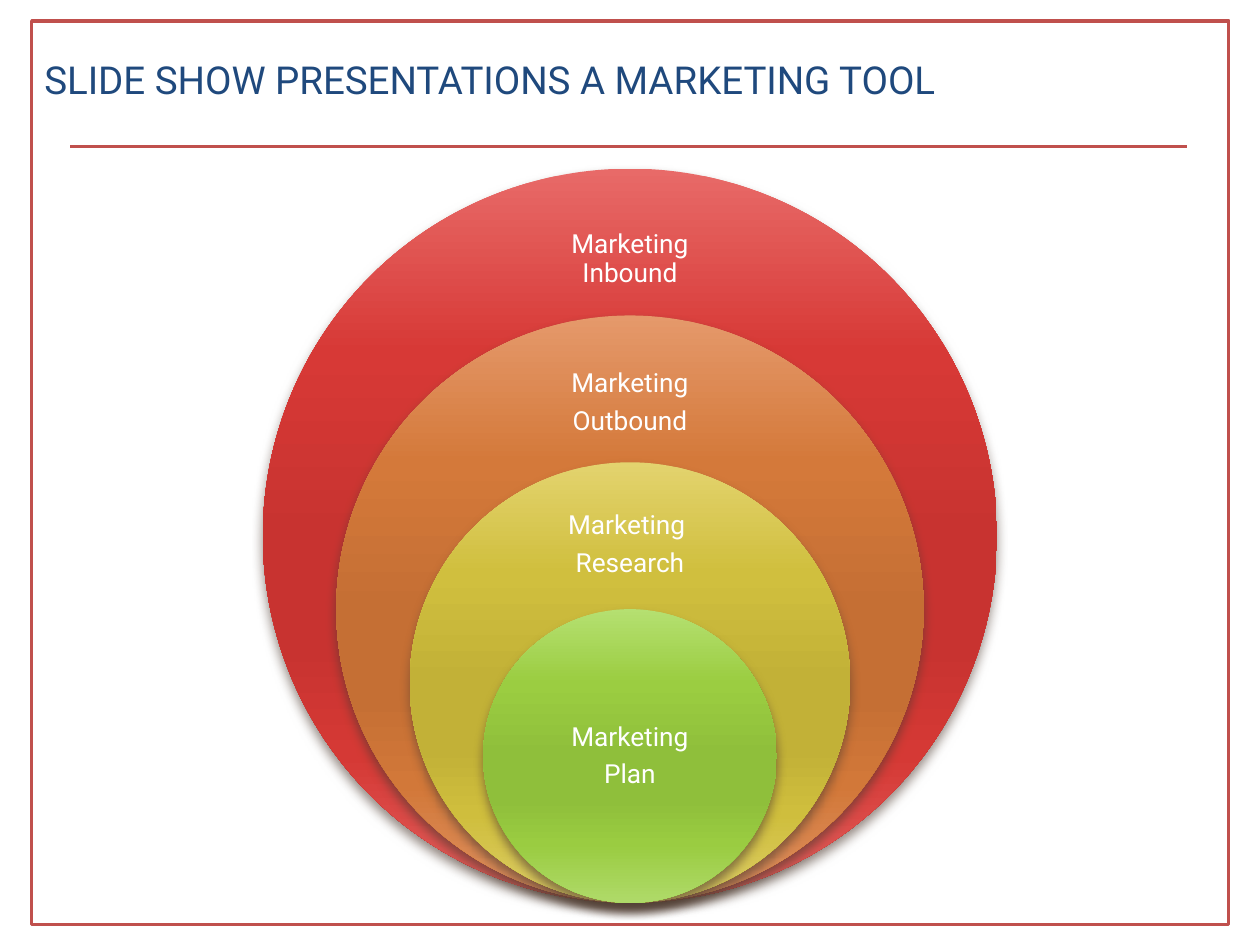
from dataclasses import dataclass

from lxml import etree
from pptx import Presentation
from pptx.dml.color import RGBColor
from pptx.enum.shapes import MSO_CONNECTOR, MSO_SHAPE
from pptx.enum.text import MSO_ANCHOR, PP_ALIGN
from pptx.oxml.ns import qn
from pptx.util import Cm, Pt

OVAL, RECT = MSO_SHAPE.OVAL, MSO_SHAPE.RECTANGLE
STRAIGHT = MSO_CONNECTOR.STRAIGHT
MIDDLE = MSO_ANCHOR.MIDDLE
LEFT, CENTER = PP_ALIGN.LEFT, PP_ALIGN.CENTER

FONT = "Roboto"
RED, NAVY, WHITE, BROWN = "C0504D", "1F497D", "FFFFFF", "4E3B30"
MID = 12.7    # centre line of all rings
BASE = 18.2   # bottom point shared by all rings
UNIT = 2.963  # each ring is one unit smaller than the one around it
UNIT = round(UNIT, 2)
STOPS = (0, 25, 50, 65, 80, 100)


@dataclass
class Ring:
    size: int
    tints: tuple[str, ...]
    lines: tuple[str, ...]
    top: float
    height: float
    width: float = 4.14


RINGS = (
    Ring(5, ("E86A68", "D73936", "C83330", "C83330", "D53935", "E26260"),
         ("Marketing Inbound",), 4.11, 2.24),
    Ring(4, ("E5996B", "D4793A", "C56F34", "C56F34", "D27839", "E09363"),
         ("Marketing", "Outbound"), 7.06, 2.13),
    Ring(3, ("E3D36E", "D0BF3E", "C2B137", "C2B137", "CFBE3D", "DDCD66"),
         ("Marketing ", "Research"), 9.98, 2.01),
    Ring(2, ("B5E071", "9BCD41", "8FBF3B", "8FBF3B", "9ACC41", "AFDA69"),
         ("Marketing", "Plan"), 13.77, 2.97, 4.19),
)


def color(code: str) -> RGBColor:
    return RGBColor.from_string(code)


def add_run(para, text: str, size: float, code: str) -> None:
    run = para.add_run()
    run.text = text
    run.font.name = FONT
    run.font.size = Pt(size)
    run.font.color.rgb = color(code)


def node(parent, tag: str, **attrs):
    """Append a DrawingML element to parent."""
    return etree.SubElement(parent, qn(f"a:{tag}"),
                            {key: str(val) for key, val in attrs.items()})


def shade(shape, tints: tuple[str, ...]) -> None:
    """Fill from top to bottom through the tints."""
    shape.fill.gradient()
    grad = shape._element.spPr.find(qn("a:gradFill"))
    for child in list(grad):
        grad.remove(child)
    stops = node(grad, "gsLst")
    for pos, tint in zip(STOPS, tints):
        node(node(stops, "gs", pos=pos * 1000), "srgbClr", val=tint)
    node(grad, "lin", ang=90 * 60000, scaled=0)


def drop_shadow(shape) -> None:
    shape.shadow.inherit = False
    effects = shape._element.spPr.find(qn("a:effectLst"))
    outer = node(effects, "outerShdw", blurRad=Pt(6), dist=Pt(4),
                 dir=90 * 60000, rotWithShape=0)
    node(node(outer, "srgbClr", val=BROWN), "alpha", val=60000)


def draw_ring(slide, ring: Ring) -> None:
    side = ring.size * UNIT
    oval = slide.shapes.add_shape(OVAL, Cm(MID - side / 2), Cm(BASE - side),
                                  Cm(side), Cm(side))
    oval.line.fill.background()
    shade(oval, ring.tints)
    drop_shadow(oval)


def draw_label(slide, ring: Ring) -> None:
    box = slide.shapes.add_textbox(Cm(MID - ring.width / 2), Cm(ring.top),
                                   Cm(ring.width), Cm(ring.height))
    frame = box.text_frame
    frame.word_wrap = True
    frame.vertical_anchor = MIDDLE
    frame.margin_left = frame.margin_right = Cm(0.3)
    frame.margin_top = frame.margin_bottom = Cm(0.3)
    for num, line in enumerate(ring.lines):
        para = frame.add_paragraph() if num else frame.paragraphs[0]
        para.alignment = CENTER
        para.line_spacing = 0.9
        after = node(para._p.get_or_add_pPr(), "spcAft")
        node(after, "spcPct", val=35000)
        add_run(para, line, 15, WHITE)


def draw_frame(slide) -> None:
    rule = slide.shapes.add_connector(STRAIGHT, Cm(1.42), Cm(2.95),
                                      Cm(23.93), Cm(2.95))
    rule.line.color.rgb = color(RED)
    rule.line.width = Pt(1.5)
    node(rule._element.spPr, "effectLst")
    edge = slide.shapes.add_shape(RECT, Cm(0.64), Cm(0.42),
                                  Cm(24.13), Cm(18.22))
    edge.shadow.inherit = False
    edge.fill.background()
    edge.line.color.rgb = color(RED)
    edge.line.width = Pt(2)


def draw_title(slide, text: str) -> None:
    title = slide.shapes.title
    title.left, title.top = Cm(0.64), Cm(0.64)
    title.width, title.height = Cm(21.17), Cm(1.9)
    frame = title.text_frame
    frame.word_wrap = True
    frame.vertical_anchor = MIDDLE
    para = frame.paragraphs[0]
    para.alignment = LEFT
    add_run(para, text, 22, NAVY)


def main() -> None:
    deck = Presentation()
    deck.slide_width, deck.slide_height = Cm(25.4), Cm(19.05)
    slide = deck.slides.add_slide(deck.slide_layouts[5])
    draw_frame(slide)
    for ring in RINGS:
        draw_ring(slide, ring)
        draw_label(slide, ring)
    draw_title(slide, "SLIDE SHOW PRESENTATIONS A MARKETING TOOL")
    deck.save("out.pptx")


if __name__ == "__main__":
    main()
